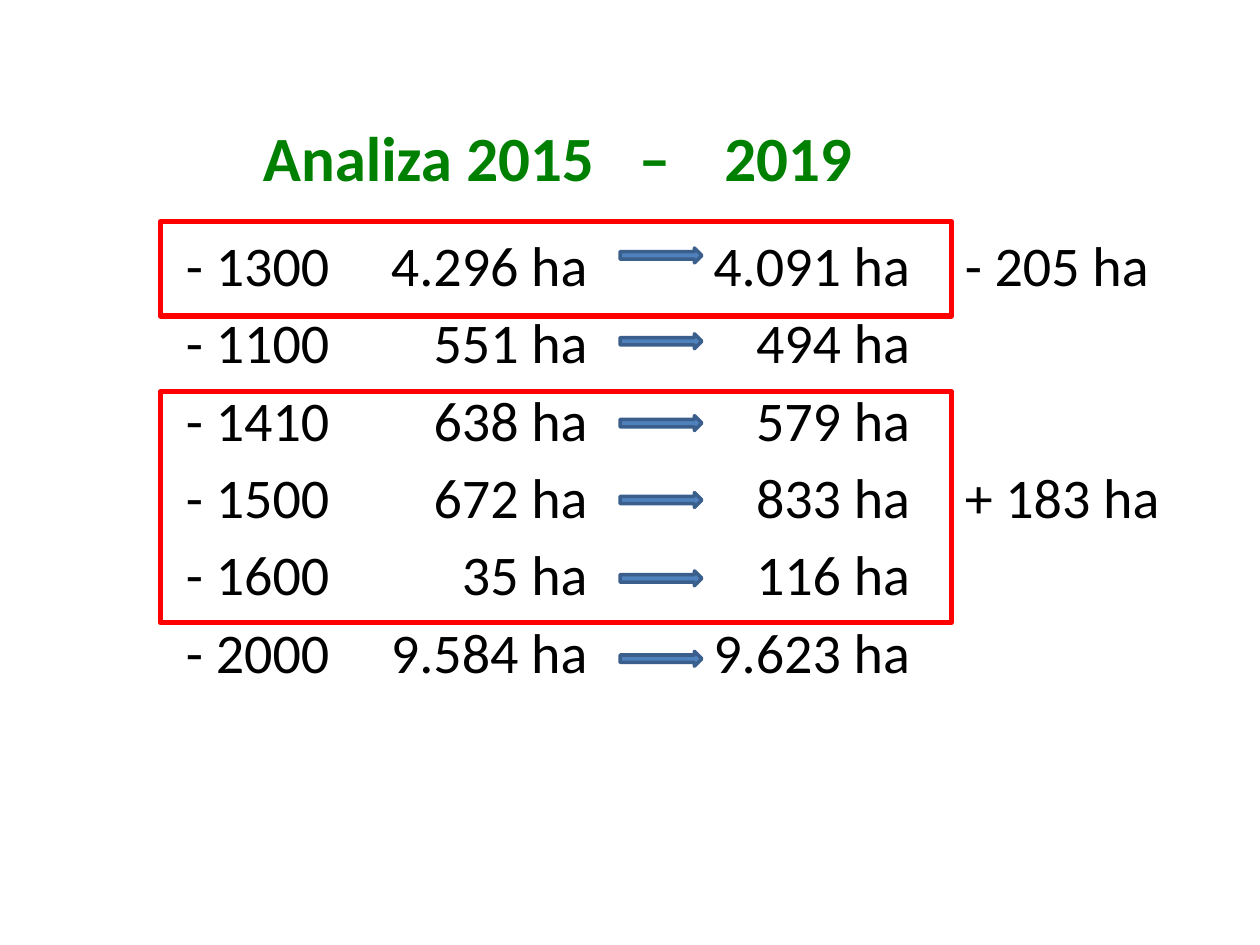
from pptx import Presentation
from pptx.dml.color import RGBColor
from pptx.enum import shapes, text
from pptx.oxml.ns import qn
from pptx.util import Cm, Pt
from lxml import etree

TITLE = "Analiza 2015\t–\t2019"
# class, area 2015, area 2019, change, top of the arrow
ROWS = [
    ("- 1300", "4.296 ha", "4.091 ha", "- 205 ha", 5),
    ("- 1100", "551 ha", "494 ha", "", 6.73),
    ("- 1410", "638 ha", "579 ha", "", 8.38),
    ("- 1500", "672 ha", "833 ha", "+ 183 ha", 9.93),
    ("- 1600", "35 ha", "116 ha", "", 11.51),
    ("- 2000", "9.584 ha", "9.623 ha", "", 13.13),
]
FRAMES = [(7.9, 4.65), (4.47, 1.9)]  # top, height
TITLE_TABS = [(7.58, "l"), (9.3, "l")]
ROW_TABS = [(8.1, "r"), (14.6, "r"), (15.7, "l")]


def color(code):
    return RGBColor.from_string(code)


def write(box, lines, tabs, size, ink="000000", bold=False, gap=0):
    frame = box.text_frame
    frame.word_wrap = True
    frame.auto_size = text.MSO_AUTO_SIZE.NONE
    frame.vertical_anchor = text.MSO_ANCHOR.TOP
    frame.margin_left = frame.margin_right = 0
    frame.margin_top = frame.margin_bottom = 0
    for i, line in enumerate(lines):
        para = frame.add_paragraph() if i else frame.paragraphs[0]
        para.text = line
        stops = etree.SubElement(para._p.get_or_add_pPr(), qn("a:tabLst"))
        for pos, side in tabs:
            etree.SubElement(stops, qn("a:tab"), pos=str(int(Cm(pos))), algn=side)
        para.alignment = text.PP_ALIGN.LEFT
        para.space_before = Pt(gap if i else 0)
        for run in para.runs:
            run.font.name = "Calibri"
            run.font.size = Pt(size)
            run.font.bold = bold
            run.font.color.rgb = color(ink)


def draw(kind, left, top, width, height, line, weight, fill=None):
    shape = slide.shapes.add_shape(kind, Cm(left), Cm(top), Cm(width), Cm(height))
    shape.shadow.inherit = False
    if fill:
        shape.fill.solid()
        shape.fill.fore_color.rgb = color(fill)
    else:
        shape.fill.background()
    shape.line.color.rgb = color(line)
    shape.line.width = Pt(weight)


deck = Presentation()
deck.slide_width, deck.slide_height = Cm(25.4), Cm(19.05)
slide = deck.slides.add_slide(deck.slide_layouts[5])

title = slide.shapes.title
title.left, title.top, title.width, title.height = Cm(5.3), Cm(2.38), Cm(14), Cm(1.6)
write(title, [TITLE], TITLE_TABS, 36, ink="008000", bold=True)

table = slide.shapes.add_textbox(Cm(3.75), Cm(4.65), Cm(20.35), Cm(9.5))
lines = ["\t".join(row[:4]).rstrip() for row in ROWS]
write(table, lines, ROW_TABS, 32, gap=5.75)

for *_, top in ROWS:
    draw(shapes.MSO_SHAPE.RIGHT_ARROW, 12.5, top, 1.65, 0.3, "3A5F8C", 2, fill="4F81BD")
for top, height in FRAMES:
    draw(shapes.MSO_SHAPE.RECTANGLE, 3.23, top, 15.95, height, "FF0000", 3)

deck.save("out.pptx")
